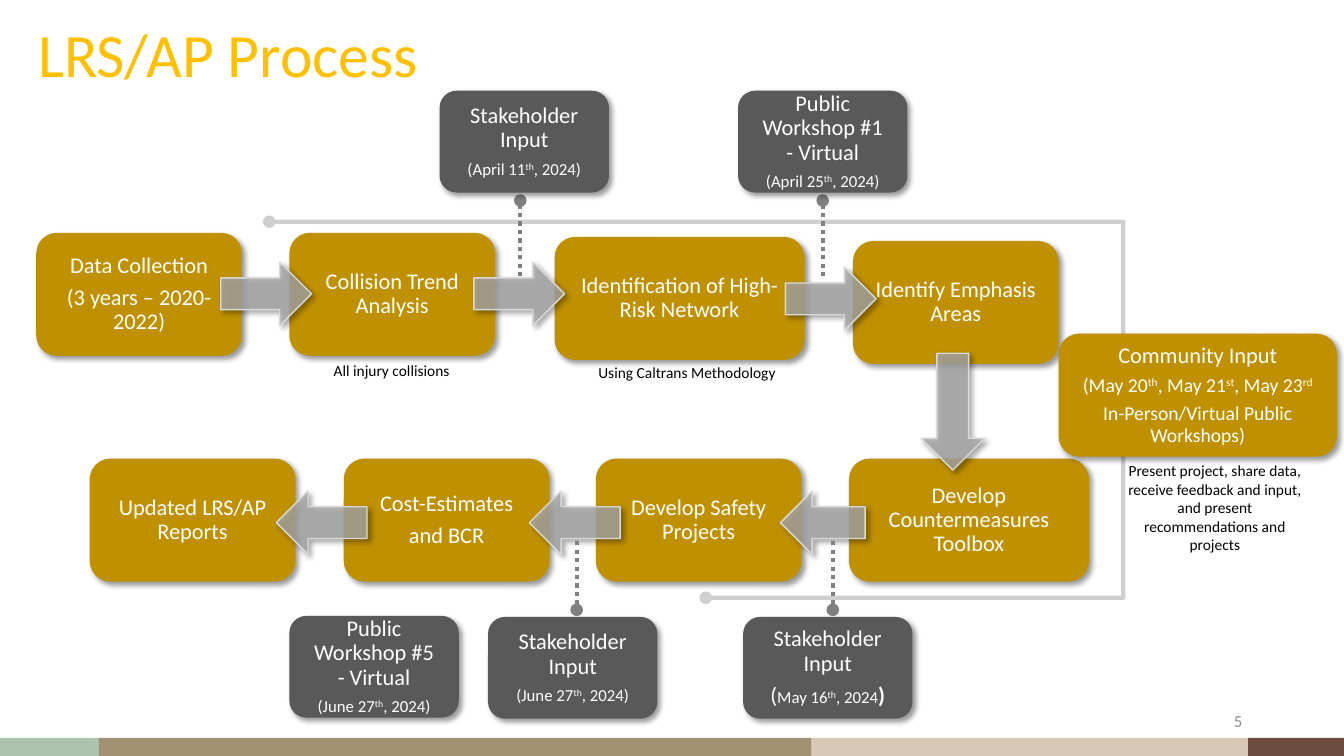
from lxml.etree import SubElement
from pptx import Presentation
from pptx.dml.color import RGBColor
from pptx.enum.dml import MSO_LINE as Dash
from pptx.enum.shapes import MSO_CONNECTOR as Conn, MSO_SHAPE as Shape
from pptx.enum.text import MSO_ANCHOR as Anchor, PP_ALIGN as Align
from pptx.oxml.ns import qn
from pptx.util import Inches, Pt

FONT = "Calibri"
GOLD, DARK, WHITE, BLACK = "BF9000", "595959", "FFFFFF", "000000"
STEP_H = 1.22
NOTE_W, NOTE_H = 1.68, 1.01


def tint(part, color):
    part.rgb = RGBColor.from_string(color)


def fade(fill, pct):
    SubElement(fill.find(".//" + qn("a:srgbClr")), qn("a:alpha"), val=str(pct * 1000))


def shade(shape):
    """Soft drop shadow towards the lower right."""
    shape.shadow.inherit = False
    glow = SubElement(shape._element.spPr.find(qn("a:effectLst")), qn("a:outerShdw"),
                      blurRad=str(Pt(4)), dist=str(Pt(3)), dir="2700000",
                      algn="tl", rotWithShape="0")
    SubElement(glow, qn("a:srgbClr"), val=BLACK)
    fade(glow, 40)


def stroke(shape):
    return shape._element.spPr.find(qn("a:ln"))


def dot_end(shape, *ends):
    for end in ends:
        SubElement(stroke(shape), qn("a:" + end), type="oval")


def add_run(para, color, text, size, mark=""):
    run = para.add_run()
    run.text = text
    run.font.name, run.font.size = FONT, Pt(size)
    tint(run.font.color, color)
    if mark == "sup":
        run._r.get_or_add_rPr().set("baseline", "30000")
    elif mark == "bold":
        run.font.bold = True


def fill_text(frame, paras, color, align, tight=False):
    """Each paragraph is a list of (text, size[, mark]) runs."""
    frame.word_wrap = True
    for i, runs in enumerate(paras):
        para = frame.paragraphs[0] if i == 0 else frame.add_paragraph()
        para.alignment = align
        if tight:
            para.line_spacing = 0.9
            para.space_after = Pt(0.35 * runs[0][1])
        for run in runs:
            add_run(para, color, *run)


def add_label(slide, x, y, w, h, text, size, color, align=Align.CENTER, anchor=Anchor.TOP):
    box = slide.shapes.add_textbox(Inches(x), Inches(y), Inches(w), Inches(h))
    box.text_frame.vertical_anchor = anchor
    fill_text(box.text_frame, [[(text, size)]], color, align)
    return box


def add_shape(slide, kind, x, y, w, h, color):
    shape = slide.shapes.add_shape(kind, Inches(x), Inches(y), Inches(w), Inches(h))
    shape.shadow.inherit = False
    shape.fill.solid()
    tint(shape.fill.fore_color, color)
    shape.line.fill.background()
    return shape


def add_box(slide, x, y, w, h, color, paras):
    box = add_shape(slide, Shape.ROUNDED_RECTANGLE, x, y, w, h, color)
    shade(box)
    frame = box.text_frame
    # The rounded corner already insets the text a little
    pad = Inches(0.2 - 0.29 * h / 6)
    frame.margin_left = frame.margin_right = pad
    frame.margin_top = frame.margin_bottom = pad
    frame.vertical_anchor = Anchor.MIDDLE
    fill_text(frame, paras, WHITE, Align.CENTER, tight=True)


def add_arrow(slide, x, y, w, turn):
    arrow = add_shape(slide, Shape.RIGHT_ARROW, x, y, w, 0.63, "A6A6A6")
    fade(arrow._element.spPr.find(qn("a:solidFill")), 80)
    tint(arrow.line.color, "D9D9D9")
    arrow.line.width = Pt(1)
    arrow.rotation = turn
    shade(arrow)


def add_stem(slide, x, start, end):
    stem = slide.shapes.add_connector(Conn.STRAIGHT, Inches(x), Inches(start),
                                      Inches(x), Inches(end))
    tint(stem.line.color, "808080")
    stem.line.width = Pt(3)
    stem.line.dash_style = Dash.ROUND_DOT
    dot_end(stem, "tailEnd")
    SubElement(stem._element.spPr, qn("a:effectLst"))


def add_loop(slide, points):
    pts = [(Inches(x), Inches(y)) for x, y in points]
    path = slide.shapes.build_freeform(*pts[0])
    path.add_line_segments(pts[1:], close=False)
    loop = path.convert_to_shape()
    loop.shadow.inherit = False
    loop.fill.background()
    tint(loop.line.color, "BFBFBF")
    loop.line.width = Pt(3)
    fade(stroke(loop), 75)
    dot_end(loop, "headEnd", "tailEnd")


def date(day):
    return [("(" + day, 12), ("th", 12, "sup"), (", 2024)", 12)]


def main():
    deck = Presentation()
    deck.slide_width, deck.slide_height = Inches(13.33), Inches(7.5)
    slide = deck.slides.add_slide(deck.slide_layouts[6])

    # Footer band, title and page number
    x = 0
    for w, color in [(0.98, "ACC4AC"), (7.07, "A29172"), (4.33, "DBC9B7"), (0.95, "6C4C3E")]:
        add_shape(slide, Shape.RECTANGLE, x, 7.32, w, 0.18, color)
        x += w
    title = add_label(slide, 0.28, 0.09, 4.11, 0.96, "LRS/AP Process", 44, "FFC000",
                      Align.LEFT, Anchor.MIDDLE)
    title.text_frame.paragraphs[0].line_spacing = 0.9
    add_label(slide, 9.42, 6.95, 3, 0.4, "5", 12, "8C8C8C", Align.RIGHT, Anchor.MIDDLE)

    # Process steps
    steps = [
        (0.36, 2.31, 2.04, ["Data Collection", "(3 years – 2020-2022)"]),
        (2.87, 2.31, 2.04, ["Collision Trend Analysis"]),
        (5.5, 2.35, 2.48, ["Identification of High-Risk Network"]),
        (8.46, 2.39, 2.04, ["Identify Emphasis Areas"]),
        (8.42, 4.55, 2.38, ["Develop Countermeasures Toolbox"]),
        (3.41, 4.55, 2.04, ["Cost-Estimates", "and BCR"]),
        (0.89, 4.55, 2.04, ["Updated LRS/AP Reports"]),
        (5.91, 4.55, 2.04, ["Develop Safety Projects"]),
    ]
    for x, y, w, lines in steps:
        add_box(slide, x, y, w, STEP_H, GOLD, [[(line, 16)] for line in lines])

    # Arrows between steps
    for x, y, w, turn in [(2.19, 2.6, 0.9, 0), (4.7, 2.6, 0.9, 0), (7.79, 2.65, 0.9, 0),
                          (8.87, 3.77, 1.16, 90), (7.74, 4.87, 0.84, 180),
                          (5.25, 4.87, 0.9, 180), (2.74, 4.87, 0.9, 180)]:
        add_arrow(slide, x, y, w, turn)

    # Feedback loop, dotted stems and community input
    add_loop(slide, [(2.67, 2.2), (11.14, 2.2), (11.14, 5.93), (7, 5.93)])
    for x, start, end in [(5.16, 2.74, 1.99), (8.16, 2.74, 1.99),
                          (5.72, 5.37, 6.05), (8.26, 5.37, 6.05)]:
        add_stem(slide, x, start, end)
    add_box(slide, 10.5, 3.31, 2.76, STEP_H, GOLD, [
        [("Community Input", 16)],
        [("(May 20", 14), ("th", 14, "sup"), (", May 21", 14), ("st", 14, "sup"),
         (", May 23", 14), ("rd", 14, "sup")],
        [("In-Person/Virtual Public Workshops)", 14)],
    ])

    # Meetings
    may = [("(", 16), ("May 16", 12), ("th", 12, "sup"), (", 2024", 12), (")", 16, "bold")]
    for x, y, name, when in [
        (4.36, 0.9, "Stakeholder Input", date("April 11")),
        (7.32, 0.9, "Public Workshop #1 - Virtual", date("April 25")),
        (2.87, 6.11, "Public Workshop #5 - Virtual", date("June 27")),
        (4.84, 6.12, "Stakeholder Input", date("June 27")),
        (7.37, 6.12, "Stakeholder Input", may),
    ]:
        add_box(slide, x, y, NOTE_W, NOTE_H, DARK, [[(name, 16)], when])

    # Captions under the boxes
    for x, y, w, h, text in [
        (3.11, 3.53, 1.55, 0.29, "All injury collisions"),
        (5.68, 3.55, 2.27, 0.29, "Using Caltrans Methodology"),
        (11.05, 4.53, 2, 1.03, "Present project, share data, receive feedback and input, "
                               "and present recommendations and projects"),
    ]:
        add_label(slide, x, y, w, h, text, 11, BLACK)

    deck.save("out.pptx")


if __name__ == "__main__":
    main()
